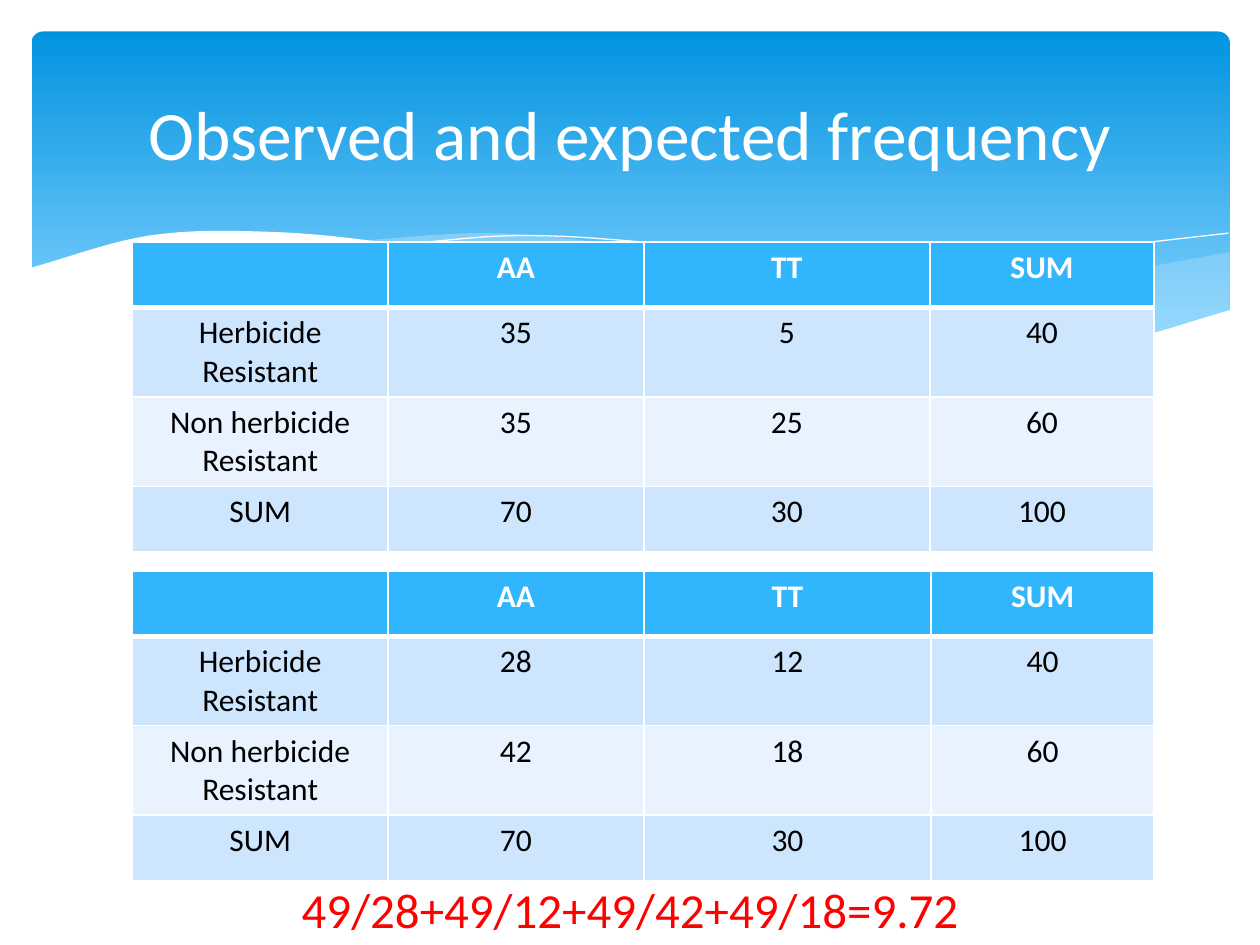
import pptx
import pptx.util
import pptx.dml.color
import pptx.enum.shapes
import pptx.enum.text
import pptx.oxml
import pptx.oxml.ns
from lxml import etree

Inches = pptx.util.Inches
RGBColor = pptx.dml.color.RGBColor

WHITE = RGBColor(0xFF, 0xFF, 0xFF)
BLACK = RGBColor(0x00, 0x00, 0x00)
RED = RGBColor(0xFF, 0x00, 0x00)
BAND_TOP = RGBColor(0x02, 0x93, 0xE0)
BAND_BOTTOM = RGBColor(0x83, 0xD3, 0xFE)
WAVE = RGBColor(0xC6, 0xE7, 0xFC)
HEADER = RGBColor(0x31, 0xB6, 0xFD)
STRIPES = (RGBColor(0xCE, 0xE5, 0xFE), RGBColor(0xE8, 0xF3, 0xFF))

STEPS_PER_SPAN = 8
ROW_NAMES = ("Herbicide Resistant", "Non herbicide\nResistant", "SUM")
ROW_HEIGHTS = (0.52, 0.71, 0.71, 0.52)
OBSERVED = [(35, 5, 40), (35, 25, 60), (70, 30, 100)]
EXPECTED = [(28, 12, 40), (42, 18, 60), (70, 30, 100)]


def write_text(frame, text, size=18, color=BLACK, bold=False):
    """Fill a text frame with centred paragraphs, one for each line of text."""
    frame.word_wrap = True
    for number, line in enumerate(text.split("\n")):
        para = frame.add_paragraph() if number else frame.paragraphs[0]
        para.alignment = pptx.enum.text.PP_ALIGN.CENTER
        span = para.add_run()
        span.text = line
        span.font.name = "Calibri"
        span.font.size = pptx.util.Pt(size)
        span.font.bold = bold
        span.font.color.rgb = color


def add_text(page, box, text, anchor=pptx.enum.text.MSO_ANCHOR.TOP, **style):
    """Place a text box in the given box."""
    frame = page.shapes.add_textbox(*map(Inches, box)).text_frame
    frame.vertical_anchor = anchor
    write_text(frame, text, **style)


def smooth_curve(start, end, depths):
    """Return points of a Catmull-Rom curve through depths at equal steps from start to end."""
    before, after = 2 * depths[0] - depths[1], 2 * depths[-1] - depths[-2]
    knots = [before, *depths, after]
    spans = len(depths) - 1
    points = []
    for step in range(spans * STEPS_PER_SPAN):
        span, part = divmod(step, STEPS_PER_SPAN)
        t = part / STEPS_PER_SPAN
        a, b, c, d = knots[span:span + 4]
        depth = b + t / 2 * (c - a + t * (2 * a - 5 * b + 4 * c - d
                                          + t * (3 * b - a - 3 * c + d)))
        points.append((start + (end - start) * (span + t) / spans, depth))
    return points + [(end, depths[-1])]


def draw_outline(page, origin, points, closed):
    """Draw a freeform through points measured from the origin."""
    left, top = origin
    spots = [(Inches(left + x), Inches(top + y)) for x, y in points]
    builder = page.shapes.build_freeform(*spots[0])
    builder.add_line_segments(spots[1:], close=closed)
    outline = builder.convert_to_shape()
    outline.shadow.inherit = False
    return outline


def add_wave(page, origin, points, color, opacity=100):
    """Draw a filled wave, its opacity given in percent."""
    wave = draw_outline(page, origin, points, closed=True)
    wave.line.fill.background()
    wave.fill.solid()
    wave.fill.fore_color.rgb = color
    if opacity < 100:
        tint = wave.fill._xPr.find(".//" + pptx.oxml.ns.qn("a:srgbClr"))
        etree.SubElement(tint, pptx.oxml.ns.qn("a:alpha"), val=str(opacity * 1000))


def add_hairline(page, origin, points):
    """Draw a thin white curve."""
    curve = draw_outline(page, origin, points, closed=False)
    curve.fill.background()
    curve.line.color.rgb = WHITE
    curve.line.width = pptx.util.Pt(0)


def add_band(page, box):
    """Draw the rounded band with its gradient."""
    band = page.shapes.add_shape(
        pptx.enum.shapes.MSO_SHAPE.ROUNDED_RECTANGLE, *map(Inches, box))
    band.adjustments[0] = 0.034
    band.shadow.inherit = False
    band.line.fill.background()
    band.fill.gradient()
    band.fill.gradient_angle = 270
    stops = zip(band.fill.gradient_stops, (0, 0.9), (BAND_TOP, BAND_BOTTOM))
    for stop, position, color in stops:
        stop.position = position
        stop.color.rgb = color


def add_waves(page, box):
    """Draw the overlapping waves and the white wave that cuts off the band."""
    left, top, width, height = box
    origin = (left, top)

    right_crest = smooth_curve(6.38, 9.53, (.81, .67, .5, .31, .16))
    right_base = smooth_curve(6.38, 9.53, (.81, .9, .93, .87, .63))
    add_wave(page, origin, right_crest + right_base[::-1], WAVE, opacity=29)

    middle_crest = smooth_curve(2.63, 8.7, (.07, .01, .1, .28, .52, .73, .89))
    middle_base = smooth_curve(2.63, 8.7, (.07, .24, .48, .69, .85, .94, .89))
    add_wave(page, origin, middle_crest + middle_base[::-1], WAVE, opacity=40)

    add_hairline(page, origin, smooth_curve(2.86, 8.84, (.11, .03, .08, .2, .38, .61, .88)))
    add_hairline(page, origin, smooth_curve(5.9, 9.52, (.73, .49, .28, .12, .01)))

    white_crest = smooth_curve(
        0, width, (.29, .03, 0, .09, .26, .48, .69, .84, .92, .88, .62))
    add_wave(page, origin, white_crest + [(width, height), (0, height)], WHITE)


def add_banner(page, box):
    """Draw the band and the waves along its lower edge."""
    left, top, width, _ = box
    add_band(page, box)
    add_waves(page, (left - 0.02, top + 1.59, width + 0.03, 1.45))


def set_borders(cell, **widths):
    """Give the cell white borders, 1 point wide unless a side says otherwise."""
    for place, side in enumerate("LRTB"):
        width = pptx.util.Pt(widths.get(side, 1))
        line = pptx.oxml.parse_xml(
            f'<a:ln{side} {pptx.oxml.ns.nsdecls("a")} w="{width}"><a:solidFill>'
            f'<a:srgbClr val="{WHITE}"/></a:solidFill></a:ln{side}>')
        cell._tc.get_or_add_tcPr().insert(place, line)


def add_frequency_table(page, box, widths, counts):
    """Place a table of frequencies with its sums."""
    rows = [("", "AA", "TT", "SUM")]
    rows += [(name, *values) for name, values in zip(ROW_NAMES, counts)]
    table = page.shapes.add_table(len(rows), len(widths), *map(Inches, box)).table
    for column, width in zip(table.columns, widths):
        column.width = Inches(width)
    for row, height in zip(table.rows, ROW_HEIGHTS):
        row.height = Inches(height)
    for r, values in enumerate(rows):
        is_header = r == 0
        for c, value in enumerate(values):
            cell = table.cell(r, c)
            cell.fill.solid()
            cell.fill.fore_color.rgb = HEADER if is_header else STRIPES[(r - 1) % 2]
            set_borders(cell, T=3 if r == 1 else 1, B=3 if is_header else 1)
            if value != "":
                write_text(cell.text_frame, str(value),
                           color=WHITE if is_header else BLACK, bold=is_header)


def main():
    """Build the slide and save it."""
    deck = pptx.Presentation()
    deck.slide_width, deck.slide_height = Inches(10), Inches(7.5)
    page = deck.slides.add_slide(deck.slide_layouts[6])
    add_banner(page, (0.25, 0.25, 9.51, 2.7))
    add_frequency_table(page, (1.05, 1.92, 8.1, 2.46), (2.03, 2.03, 2.27, 1.78), OBSERVED)
    add_text(page, (0.5, 0.37, 9, 1.37), "Observed and expected frequency",
             anchor=pptx.enum.text.MSO_ANCHOR.MIDDLE, size=39.6, color=WHITE)
    add_frequency_table(page, (1.05, 4.53, 8.1, 2.46), (2.03, 2.03, 2.28, 1.77), EXPECTED)
    add_text(page, (1.56, 6.93, 6.88, 0.57), "49/28+49/12+49/42+49/18=9.72",
             size=28, color=RED)
    deck.save("out.pptx")


if __name__ == "__main__":
    main()
